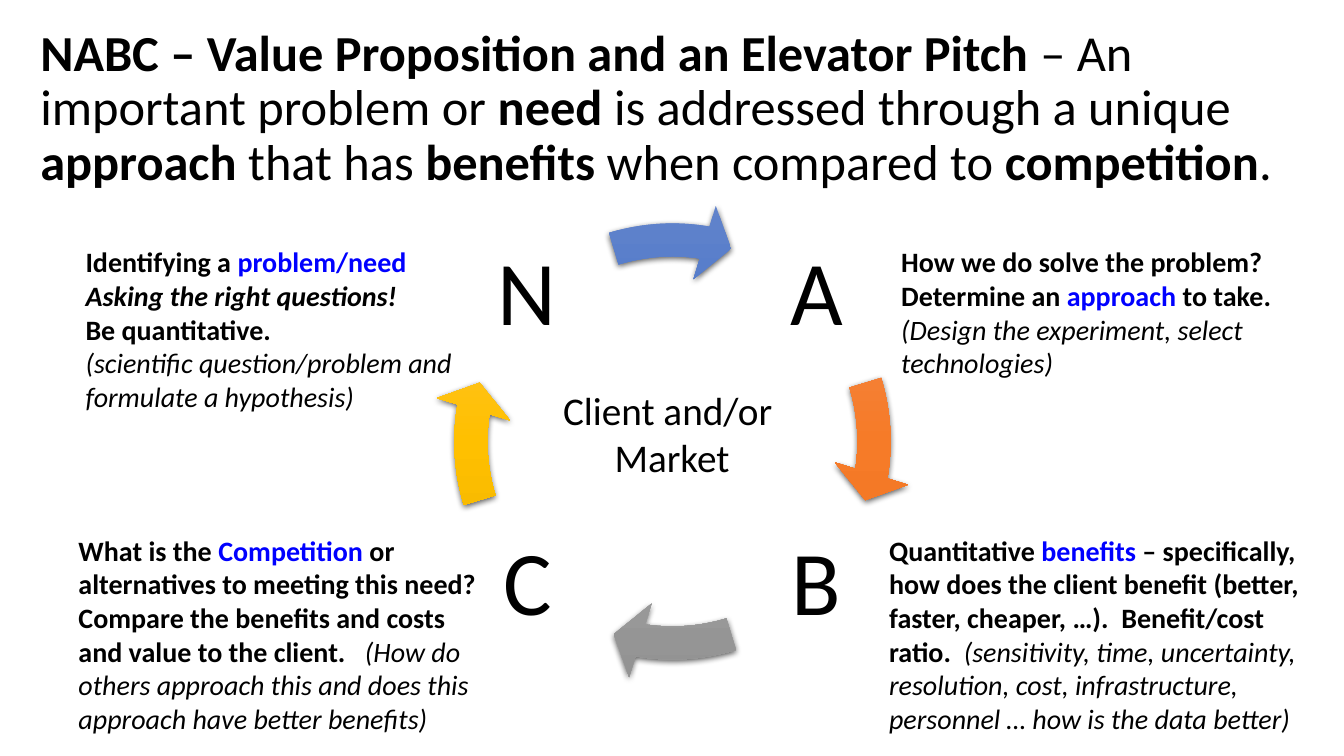
"""Build the NABC value proposition slide with its four-step cycle."""
from lxml import etree
from pptx import Presentation
from pptx import util as u
from pptx.dml.color import RGBColor
from pptx.enum import shapes, text
from pptx.oxml.ns import nsdecls

COLORS = {"text": "000000", "key": "0000FF"}
FONT = "Calibri"

# Style letters: b bold, i italic, k key colour
TITLE = [
    ("NABC – Value Proposition and an Elevator Pitch ", "b"),
    ("– An important problem or ", ""), ("need", "b"),
    (" is addressed through a unique ", ""), ("approach", "b"),
    (" that has ", ""), ("benefits", "b"),
    (" when compared to ", ""), ("competition", "b"), (".", ""),
]
CENTER = [[("Client and/or ", "")], [("Market", "")]]
NOTES = [
    ((0.75, 2.38, 3.99, 1.78), [
        [("Identifying a ", "b"), ("problem/need", "bk")],
        [("Asking the right questions!", "bi")],
        [("Be quantitative.", "b")],
        [("(scientific question/problem and formulate a hypothesis)", "i")]]),
    ((8.84, 2.38, 4.41, 1.45), [[
        ("How we do solve the problem?  Determine an ", "b"),
        ("approach", "bk"), (" to take. ", "b"),
        ("(Design the experiment, select technologies)", "i")]]),
    ((8.72, 5.24, 4.53, 2.12), [[
        ("Quantitative ", "b"), ("benefits", "bk"),
        (" – specifically, how does the client benefit (better, faster, "
         "cheaper, …).  Benefit/cost ratio.  ", "b"),
        ("(sensitivity, time, uncertainty, resolution, cost, infrastructure, "
         "personnel … how is the data better)", "i")]]),
    ((0.68, 5.24, 4.25, 2.12), [[
        ("What is the ", "b"), ("Competition ", "bk"),
        ("or alternatives to meeting this need?  Compare the benefits and "
         "costs and value to the client.   ", "b"),
        ("(How do others approach this and does this approach have better "
         "benefits)", "i")]]),
]
# Letter, column, row, gradient of the arrow that follows clockwise
STEPS = [
    ("A", 1, 0, ("F18C57", "F67B28", "E56C19")),
    ("B", 1, 1, ("AFAFAF", "A5A5A5", "939393")),
    ("C", 0, 1, ("FFC64B", "FFC000", "E3AB00")),
    ("N", 0, 0, ("6183CB", "3E70CA", "3062BB")),
]
CELL, PITCH, GRID_LEFT, GRID_TOP = 1.68, 2.87, 4.39, 2.1
RING = (4.29, 2, 4.76, 4.76)
QUARTER, FULL = 54, 216


def inches(box):
    return [u.Inches(v) for v in box]


def write(p, runs, size, align=text.PP_ALIGN.LEFT, spacing=None):
    p.alignment = align
    p.line_spacing = spacing
    for words, style in runs:
        r = p.add_run()
        r.text = words
        r.font.name, r.font.size = FONT, u.Pt(size)
        r.font.bold, r.font.italic = "b" in style, "i" in style
        color = COLORS["key" if "k" in style else "text"]
        r.font.color.rgb = RGBColor.from_string(color)


def add_text(s, box, paragraphs, size, align=text.PP_ALIGN.LEFT,
             spacing=None, wrap=True):
    tf = s.shapes.add_textbox(*inches(box)).text_frame
    tf.word_wrap = wrap
    for i, runs in enumerate(paragraphs):
        p = tf.add_paragraph() if i else tf.paragraphs[0]
        write(p, runs, size, align, spacing)
    return tf


def add_arrow(s, step, colors):
    sp = s.shapes.add_shape(shapes.MSO_SHAPE.CIRCULAR_ARROW, *inches(RING))
    turn = step * QUARTER
    values = (0.069, 4.651, 5.504 + turn, (205.845 + turn) % FULL, 0.08)
    for i, value in enumerate(values):
        sp.adjustments[i] = value
    sp.line.fill.background()
    stops = "".join(f'<a:gs pos="{i * 50000}"><a:srgbClr val="{c}"/></a:gs>'
                    for i, c in enumerate(colors))
    fill = etree.fromstring(
        f'<a:gradFill {nsdecls("a")} rotWithShape="1"><a:gsLst>{stops}</a:gsLst>'
        '<a:lin ang="5400000" scaled="0"/></a:gradFill>')
    shadow = etree.fromstring(
        f'<a:effectLst {nsdecls("a")}><a:outerShdw blurRad="57150" dist="19050" '
        'dir="5400000" algn="ctr" rotWithShape="0"><a:srgbClr val="000000">'
        '<a:alpha val="63000"/></a:srgbClr></a:outerShdw></a:effectLst>')
    props = sp.element.spPr
    props.insert(2, fill)
    props.append(shadow)


def main():
    prs = Presentation()
    prs.slide_width, prs.slide_height = u.Inches(13.33), u.Inches(7.5)
    s = prs.slides.add_slide(prs.slide_layouts[5])

    title = s.shapes.title
    title.left, title.top, title.width, title.height = inches((0.3, 0.36, 12.74, 1.45))
    tf = title.text_frame
    tf.auto_size = text.MSO_AUTO_SIZE.NONE
    tf.vertical_anchor = text.MSO_ANCHOR.MIDDLE
    write(tf.paragraphs[0], TITLE, 36, spacing=0.9)

    for step, (letter, col, row, colors) in enumerate(STEPS):
        box = (GRID_LEFT + col * PITCH, GRID_TOP + row * PITCH, CELL, CELL)
        tf = add_text(s, box, [[(letter, "")]], 65, text.PP_ALIGN.CENTER, 0.9)
        tf.vertical_anchor = text.MSO_ANCHOR.MIDDLE
        add_arrow(s, step, colors)

    add_text(s, (5.47, 3.78, 2.39, 1.04), CENTER, 28, text.PP_ALIGN.CENTER, wrap=False)
    for box, paragraphs in NOTES:
        add_text(s, box, paragraphs, 20)

    prs.save("out.pptx")


if __name__ == "__main__":
    main()
